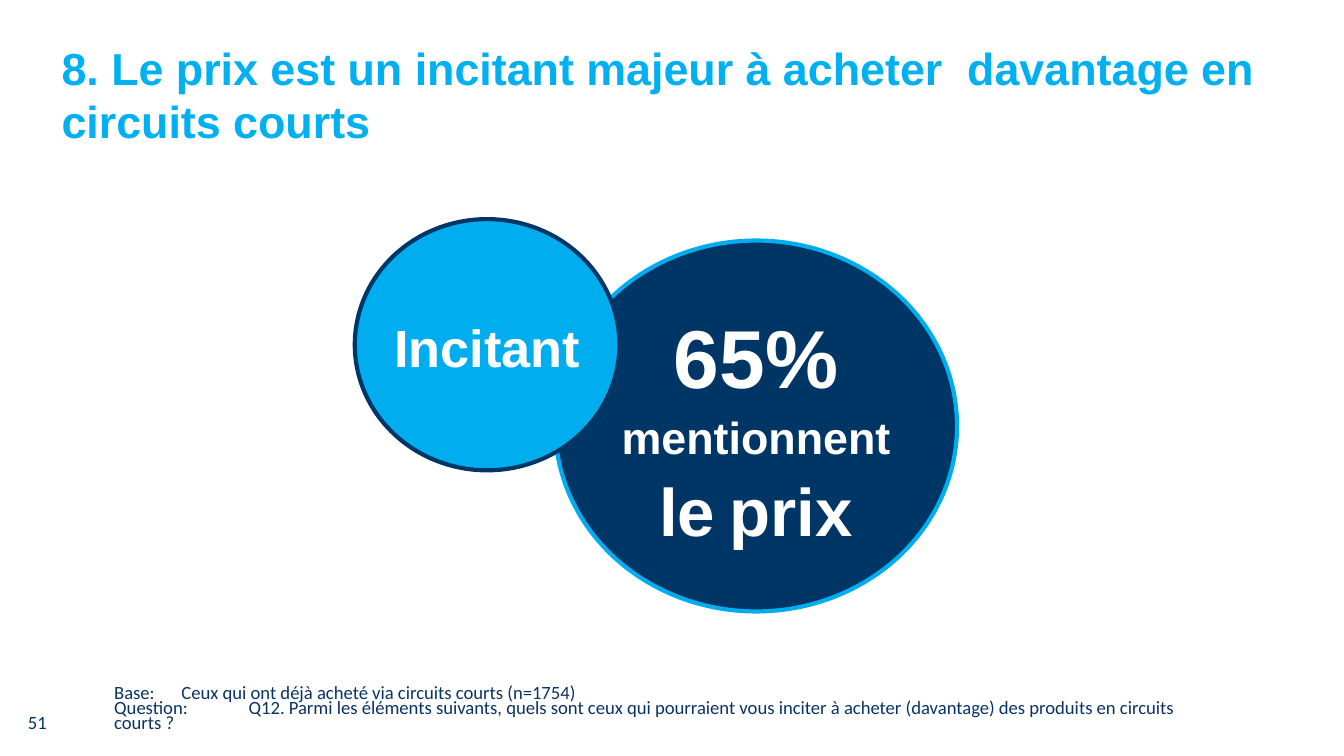
from pptx import Presentation
from pptx.dml.color import RGBColor
from pptx.enum.shapes import MSO_SHAPE
from pptx.enum.text import MSO_ANCHOR, PP_ALIGN
from pptx.util import Pt

NAVY = RGBColor(0x00, 0x36, 0x65)
FOOTER_NAVY = RGBColor(0x0A, 0x33, 0x65)
CYAN = RGBColor(0x00, 0xAE, 0xEF)
TITLE_BLUE = RGBColor(0x00, 0xB0, 0xF0)
WHITE = RGBColor(0xFF, 0xFF, 0xFF)


def set_margins(frame, left, top, right, bottom):
    frame.margin_left, frame.margin_top = Pt(left), Pt(top)
    frame.margin_right, frame.margin_bottom = Pt(right), Pt(bottom)


def style_font(font, name, size, color, bold=False):
    font.name, font.size, font.bold = name, Pt(size), bold
    font.color.rgb = color


def add_text(page, box, lines, name, size, color, bold=False, margins=(7.2, 3.6, 7.2, 3.6)):
    frame = page.shapes.add_textbox(*map(Pt, box)).text_frame
    frame.word_wrap = True
    set_margins(frame, *margins)
    frame.text = "\n".join(lines)
    for para in frame.paragraphs:
        style_font(para.font, name, size, color, bold)
    return frame


def add_title(page, box):
    title = "8. Le prix est un incitant majeur à acheter  davantage en circuits courts"
    add_text(page, box, [title], "Arial", 24, TITLE_BLUE, True, (7.2, 6.5, 7.2, 3.6))


def add_page_number(page, box):
    frame = add_text(page, box, ["51"], "Calibri", 10, NAVY)
    frame.vertical_anchor = MSO_ANCHOR.MIDDLE


def add_footnote(page, box):
    lines = [
        "Base:\tCeux qui ont déjà acheté via circuits courts (n=1754)",
        "Question:\tQ12. Parmi les éléments suivants, quels sont ceux qui pourraient "
        "vous inciter à acheter (davantage) des produits en circuits courts ?",
    ]
    frame = add_text(page, box, lines, "Calibri", 10, FOOTER_NAVY, margins=(0, 0, 0, 0))
    for para in frame.paragraphs:
        para.line_spacing = Pt(8)


def add_bubble(page, box, fill, outline, lines):
    bubble = page.shapes.add_shape(MSO_SHAPE.OVAL, *map(Pt, box))
    bubble.shadow.inherit = False
    bubble.fill.solid()
    bubble.fill.fore_color.rgb = fill
    bubble.line.color.rgb = outline
    bubble.line.width = Pt(2.25)
    frame = bubble.text_frame
    frame.word_wrap = True
    frame.vertical_anchor = MSO_ANCHOR.MIDDLE
    set_margins(frame, 0, 5.76, 0, 3.6)
    for index, spans in enumerate(lines):
        para = frame.add_paragraph() if index else frame.paragraphs[0]
        para.alignment = PP_ALIGN.CENTER
        if index:
            para.space_before = Pt(3)
        for text, size in spans:
            span = para.add_run()
            span.text = text
            style_font(span.font, "Arial", size, WHITE, True)


def add_bubbles(page, box):
    left, top, width, height = box
    result = [[("65%", 44)], [("mentionnent", 24)], [("le", 36), (" ", 28), ("prix", 36)]]
    big_width, big_height = 215.3, 198.7
    big_box = (left + width - big_width, top + height - big_height, big_width, big_height)
    add_bubble(page, big_box, NAVY, CYAN, result)
    add_bubble(page, (left, top, 141.8, 134.6), CYAN, NAVY, [[("Incitant", 28)]])


def main():
    deck = Presentation()
    deck.slide_width, deck.slide_height = Pt(720), Pt(405)
    page = deck.slides.add_slide(deck.slide_layouts[6])
    add_page_number(page, (7.9, 375.8, 167.8, 21.6))
    add_footnote(page, (61.2, 368.6, 586.8, 22.3))
    add_title(page, (25.9, 15.1, 664.6, 42.5))
    add_bubbles(page, (190.1, 117.4, 322.6, 210.2))
    deck.save("out.pptx")


if __name__ == "__main__":
    main()
